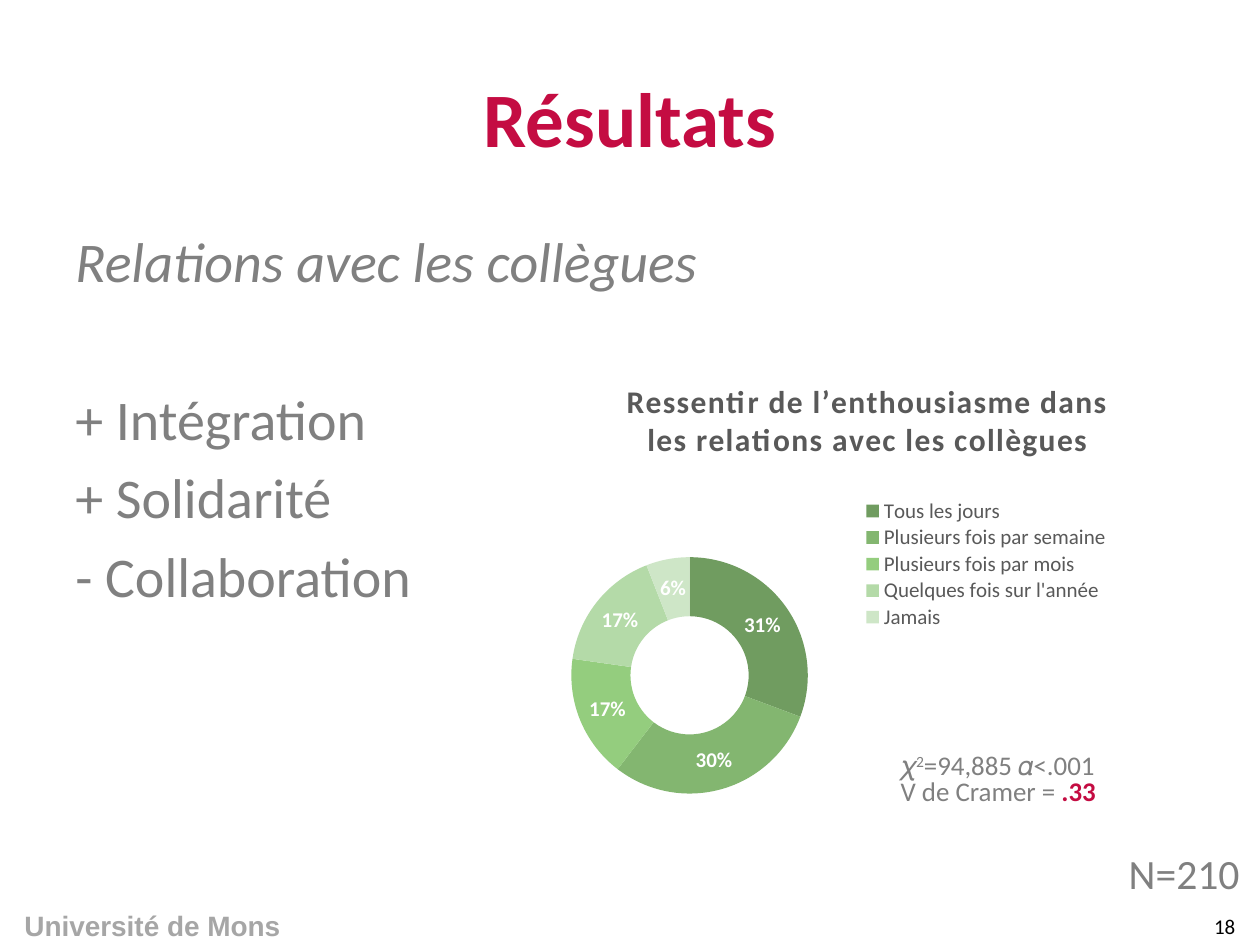
from dataclasses import dataclass

from lxml.etree import SubElement
from pptx import Presentation
from pptx.chart.data import CategoryChartData
from pptx.dml.color import RGBColor
from pptx.enum.chart import XL_CHART_TYPE, XL_LEGEND_POSITION
from pptx.enum.text import MSO_ANCHOR, PP_ALIGN
from pptx.oxml.ns import qn
from pptx.util import Inches, Pt


@dataclass(frozen=True)
class Theme:
    font: str = "Calibri"
    footer_font: str = "Arial"
    accent: str = "C40C42"
    grey: str = "808080"
    dark: str = "595959"
    pale: str = "A6A6A6"
    black: str = "000000"
    white: str = "FFFFFF"
    greens: tuple = ("709C60", "83B670", "94CD7E", "B4DAA8", "CEE6C7")
    title: float = 44
    body: float = 32
    sample: float = 23.8
    chart_title: float = 18
    footer: float = 16
    stats: float = 15.4
    small: float = 12


T = Theme()


class SlideBuilder:
    def __init__(self, prs, theme):
        self.theme = theme
        self.s = prs.slides.add_slide(prs.slide_layouts[6])

    def style(self, font, size, color, **fmt):
        values = {"name": self.theme.font, "size": Pt(size), **fmt}
        for name, value in values.items():
            setattr(font, name, value)
        font.color.rgb = RGBColor.from_string(color)

    def text(self, box, paragraphs, size, color, wrap=True,
             anchor=MSO_ANCHOR.TOP, para=None, **fmt):
        """Each paragraph is a list of (text, run format) pairs."""
        tf = self.s.shapes.add_textbox(*map(Inches, box)).text_frame
        tf.word_wrap = wrap
        tf.vertical_anchor = anchor
        for i, runs in enumerate(paragraphs):
            p = tf.paragraphs[0] if i == 0 else tf.add_paragraph()
            for name, value in (para or {}).items():
                setattr(p, name, value)
            for content, own in runs:
                own = {"color": color, **fmt, **own}
                baseline = own.pop("baseline", None)
                r = p.add_run()
                r.text = content
                self.style(r.font, size, **own)
                if baseline:
                    r.font._element.set("baseline", str(baseline))
        return tf

    def place(self, element, **edges):
        """Give a chart part a manual layout, in fractions of the chart."""
        layout = element.get_or_add_layout() if hasattr(
            element, "get_or_add_layout") else element.find(qn("c:layout"))
        if layout is None:
            layout = element.makeelement(qn("c:layout"), {})
            element.insert(0, layout)
        for old in list(layout):
            layout.remove(old)
        manual = SubElement(layout, qn("c:manualLayout"))
        if "target" in edges:
            SubElement(manual, qn("c:layoutTarget"), val=edges.pop("target"))
        for axis in ("x", "y"):
            SubElement(manual, qn(f"c:{axis}Mode"), val="edge")
        for name, value in edges.items():
            SubElement(manual, qn(f"c:{name}"), val=str(value))

    def doughnut(self, box, title, answers):
        t = self.theme
        data = CategoryChartData()
        data.categories = list(answers)
        data.add_series("Series 1", list(answers.values()))
        chart = self.s.shapes.add_chart(
            XL_CHART_TYPE.DOUGHNUT, *map(Inches, box), data).chart
        self.style(chart.font, 10, t.black)

        # Chart title
        chart.has_title = True
        r = chart.chart_title.text_frame.paragraphs[0].add_run()
        r.text = title
        self.style(r.font, t.chart_title, t.dark, bold=True)
        r.font._element.set("spc", "80")

        # Legend
        chart.has_legend = True
        legend = chart.legend
        legend.position = XL_LEGEND_POSITION.TOP
        legend.include_in_layout = False
        self.style(legend.font, t.small, t.dark)
        self.place(legend._element, x=0.48, y=0.3, w=0.4, h=0.29)

        # Ring and percentages
        plot = chart.plots[0]
        plot.vary_by_categories = True
        self.place(chart._chartSpace.chart.plotArea, target="inner",
                   x=0.05, y=0.43, w=0.36, h=0.51)
        for i, green in enumerate(t.greens):
            fill = plot.series[0].points[i].format.fill
            fill.solid()
            fill.fore_color.rgb = RGBColor.from_string(green)
        plot.has_data_labels = True
        labels = plot.data_labels
        options = {"show_percentage": True, "show_value": False,
                   "number_format": "0%", "number_format_is_linked": False}
        for name, value in options.items():
            setattr(labels, name, value)
        self.style(labels.font, t.small, t.white, bold=True)


def main():
    prs = Presentation()
    prs.slide_width, prs.slide_height = Inches(10), Inches(7.5)
    b = SlideBuilder(prs, T)
    centred = {"alignment": PP_ALIGN.CENTER}
    tight = {"line_spacing": 0.8}

    # Footer
    b.text((-0.01, 7.16, 2.44, 0.37), [[("Université de Mons", {})]],
           T.footer, T.pale, para=centred, name=T.footer_font, bold=True)

    # Title and body
    b.text((0.5, 0.3, 9, 1.25), [[("Résultats", {})]], T.title, T.accent,
           anchor=MSO_ANCHOR.MIDDLE, para=centred, bold=True)
    points = ("+ Intégration", "+ Solidarité", "- Collaboration")
    body = b.text((0.5, 1.75, 9, 4.95),
                  [[("Relations avec les collègues", {"italic": True})]]
                  + [[(point, {})] for point in points], T.body, T.grey)
    for p, gap in zip(body.paragraphs[1:], (51.8, 6.4, 6.4)):
        p.space_before = Pt(gap)

    # Chart
    b.doughnut((4.27, 2.84, 5.23, 3.68),
               "Ressentir de l’enthousiasme dans les relations "
               "avec les collègues",
               {"Tous les jours": 31, "Plusieurs fois par semaine": 30,
                "Plusieurs fois par mois": 17,
                "Quelques fois sur l'année": 17, "Jamais": 6})

    # Statistics and sample size
    b.text((7.05, 5.94, 2.01, 0.56),
           [[("𝜒", {}), ("2", {"baseline": 30000}), ("=94,885 𝛼<.001", {})],
            [("V de Cramer = ", {}),
             (".33", {"color": T.accent, "bold": True})]],
           T.stats, T.grey, wrap=False, para=tight)
    b.text((8.86, 6.76, 1.11, 0.44), [[("N=210", {})]],
           T.sample, T.grey, wrap=False, para=tight)

    # Slide number
    b.text((9.44, 7.2, 0.56, 0.3), [[("18", {})]], T.small, T.black,
           anchor=MSO_ANCHOR.MIDDLE, para=centred)

    prs.save("out.pptx")


if __name__ == "__main__":
    main()
